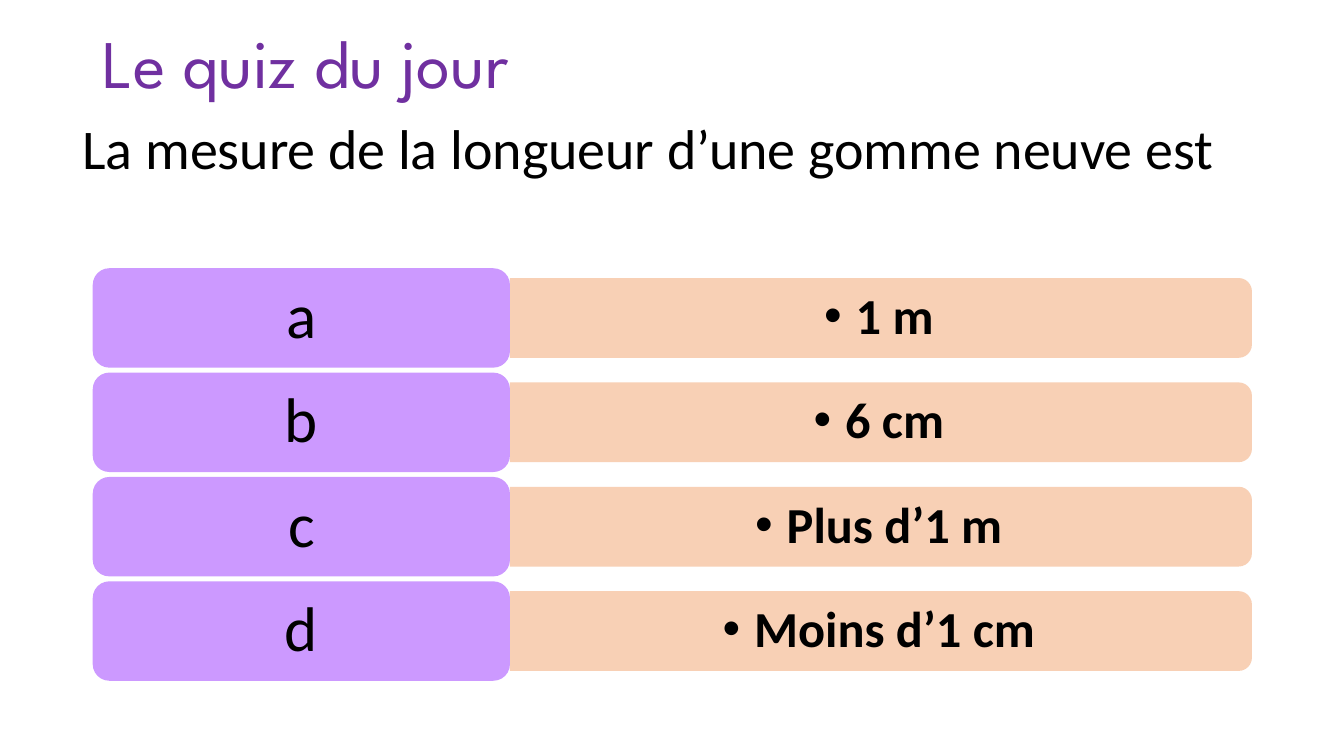
from dataclasses import dataclass

from lxml import etree
from pptx import Presentation
from pptx.dml.color import RGBColor
from pptx.enum.shapes import MSO_SHAPE
from pptx.enum.text import MSO_ANCHOR, PP_ALIGN
from pptx.oxml.ns import qn
from pptx.util import Pt

ROUNDED = MSO_SHAPE.ROUNDED_RECTANGLE
ROUNDED_TOP = MSO_SHAPE.ROUND_2_SAME_RECTANGLE
MIDDLE, TOP = MSO_ANCHOR.MIDDLE, MSO_ANCHOR.TOP
LEFT, CENTER = PP_ALIGN.LEFT, PP_ALIGN.CENTER


@dataclass(frozen=True)
class Theme:
    title: RGBColor = RGBColor(0x70, 0x30, 0xA0)
    text: RGBColor = RGBColor(0, 0, 0)
    label: RGBColor = RGBColor(0xCC, 0x99, 0xFF)
    answer: RGBColor = RGBColor(0xF8, 0xCB, 0xAD)
    answer_alpha: int = 90000
    title_font: str = "League Spartan"
    body_font: str = "Calibri"
    title_size: float = 48.6
    question_size: float = 40
    label_size: float = 45
    answer_size: float = 36


THEME = Theme()
CHOICES = {"a": "1 m", "b": "6 cm", "c": "Plus d’1 m", "d": "Moins d’1 cm"}
ROW_LEFT, ROW_TOP, ROW_PITCH = 66.24, 191.6, 74.55
LABEL_W, LABEL_H = 298, 71
ANSWER_W, ANSWER_H = 530, 57
BULLET_INDENT = 22.5


def write(sp, text, size, color=THEME.text, font=THEME.body_font, bold=False,
          align=CENTER, anchor=MIDDLE, spacing=0.9, inset=(7.2, 3.6)):
    tf = sp.text_frame
    dx, dy = map(Pt, inset)
    frame_format = {"word_wrap": True, "vertical_anchor": anchor,
                    "margin_left": dx, "margin_right": dx,
                    "margin_top": dy, "margin_bottom": dy}
    for name, value in frame_format.items():
        setattr(tf, name, value)
    p = tf.paragraphs[0]
    p.alignment, p.line_spacing = align, spacing
    r = p.add_run()
    r.text = text
    for name, value in {"name": font, "size": Pt(size), "bold": bold}.items():
        setattr(r.font, name, value)
    r.font.color.rgb = color
    return p


def add_text(s, box, text, size, **style):
    sp = s.shapes.add_textbox(*map(Pt, box))
    return write(sp, text, size, **style)


def add_block(s, kind, box, color):
    sp = s.shapes.add_shape(kind, *map(Pt, box))
    sp.shadow.inherit = False
    sp.fill.solid()
    sp.fill.fore_color.rgb = color
    sp.line.fill.background()
    return sp


def add_bullet(p):
    pPr = p._p.get_or_add_pPr()
    pPr.set("marL", str(Pt(BULLET_INDENT)))
    pPr.set("indent", str(-Pt(BULLET_INDENT)))
    etree.SubElement(pPr, qn("a:buFont")).set("typeface", "Arial")
    etree.SubElement(pPr, qn("a:buChar")).set("char", "•")


def add_answer(s, left, middle, text):
    top = middle - ANSWER_H / 2
    box = (left + (ANSWER_W - ANSWER_H) / 2, middle - ANSWER_W / 2, ANSWER_H, ANSWER_W)
    sp = add_block(s, ROUNDED_TOP, box, THEME.answer)
    sp.rotation = 90
    color = sp.fill._xPr.find(".//" + qn("a:srgbClr"))
    etree.SubElement(color, qn("a:alpha")).set("val", str(THEME.answer_alpha))
    p = add_text(s, (left, top, ANSWER_W - 3, ANSWER_H), text, THEME.answer_size,
                 bold=True, inset=(10.8, 5.4))
    add_bullet(p)


def add_choice(s, row, letter, answer):
    top = ROW_TOP + row * ROW_PITCH
    add_answer(s, ROW_LEFT + LABEL_W, top + LABEL_H / 2, answer)
    label = add_block(s, ROUNDED, (ROW_LEFT, top, LABEL_W, LABEL_H), THEME.label)
    write(label, letter, THEME.label_size, inset=(13.5, 6.75))


def main():
    prs = Presentation()
    prs.slide_width, prs.slide_height = Pt(960), Pt(540)
    s = prs.slides.add_slide(prs.slide_layouts[6])
    add_text(s, (66.24, 19.44, 828, 55.44), "Le quiz du jour", THEME.title_size,
             color=THEME.title, font=THEME.title_font, align=LEFT)
    for row, (letter, answer) in enumerate(CHOICES.items()):
        add_choice(s, row, letter, answer)
    add_text(s, (31.68, 77.76, 862.56, 55.44),
             "La mesure de la longueur d’une gomme neuve est",
             THEME.question_size, anchor=TOP, spacing=1.0)
    prs.save("out.pptx")


if __name__ == "__main__":
    main()
